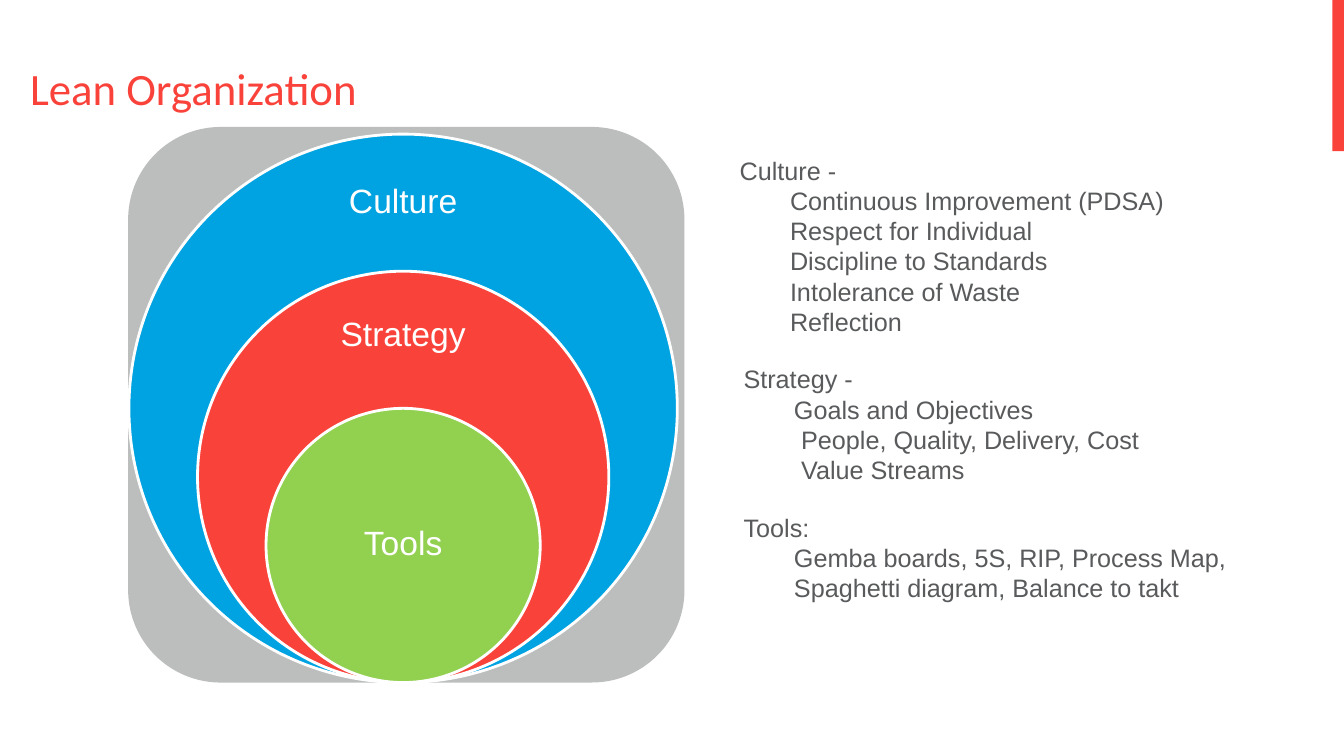
from pptx import Presentation
from pptx.dml.color import RGBColor
from pptx.enum.shapes import MSO_SHAPE as SHAPE
from pptx.enum.text import MSO_ANCHOR as ANCHOR, PP_ALIGN as ALIGN
from pptx.util import Cm, Pt
from lxml import etree
from pptx.oxml.ns import qn

THEME = {
    "red": RGBColor.from_string("F9423A"),
    "blue": RGBColor.from_string("00A3E1"),
    "green": RGBColor.from_string("92D050"),
    "grey": RGBColor.from_string("585A5C"),
    "white": RGBColor.from_string("FFFFFF"),
    "title": {"name": "Calibri", "size": Pt(32)},
    "label": {"name": "Arial", "size": Pt(24)},
    "body": {"name": "Arial", "size": Pt(18)},
}

prs = Presentation()
prs.slide_width, prs.slide_height = Cm(33.87), Cm(19.05)
s = prs.slides.add_slide(prs.slide_layouts[6])


def add_shape(kind, box, color, outlined=False):
    sp = s.shapes.add_shape(kind, *[Cm(v) for v in box])
    sp.shadow.inherit = False
    sp.fill.solid()
    sp.fill.fore_color.rgb = THEME[color]
    if outlined:
        sp.line.color.rgb = THEME["white"]
        sp.line.width = Pt(2)
    else:
        sp.line.fill.background()
    return sp


def add_text(box, lines, style, color, anchor=ANCHOR.TOP, **layout):
    tf = s.shapes.add_textbox(*[Cm(v) for v in box]).text_frame
    tf.word_wrap = True
    tf.vertical_anchor = anchor
    for i, (text, indent) in enumerate(lines):
        p = tf.paragraphs[0] if i == 0 else tf.add_paragraph()
        p._p.get_or_add_pPr().set("marL", str(Cm(indent)))
        for key, value in layout.items():
            setattr(p, key, value)
        r = p.add_run()
        r.text = text
        for key, value in THEME[style].items():
            setattr(r.font, key, value)
        r.font.color.rgb = THEME[color]


add_shape(SHAPE.RECTANGLE, (33.58, 0, 0.29, 3.81), "red")
add_text((0.51, 0.43, 22.86, 2.59), [("Lean Organization", 0)], "title", "red", ANCHOR.BOTTOM)

panel = add_shape(SHAPE.ROUNDED_RECTANGLE, (3.23, 3.2, 14.02, 14), "grey")
rgb = panel._element.spPr.find(qn("a:solidFill")).find(qn("a:srgbClr"))
etree.SubElement(rgb, qn("a:alpha")).set("val", "40000")

CENTER, BOTTOM, OUTER, LABEL_W = 10.16, 17.2, 13.82, 4.83
rings = [
    ("Culture", 1, "blue", 4.06, 2.08),
    ("Strategy", 0.75, "red", 7.49, 1.93),
    ("Tools", 0.5, "green", 12.01, 3.45),
]
for name, scale, color, top, height in rings:
    d = OUTER * scale
    add_shape(SHAPE.OVAL, (CENTER - d / 2, BOTTOM - d, d, d), color, outlined=True)
    add_text((CENTER - LABEL_W / 2, top, LABEL_W, height), [(name, 0)], "label", "white",
             ANCHOR.MIDDLE, alignment=ALIGN.CENTER, line_spacing=0.9)

TAB, DEEP = 1.27, 1.45
notes = [
    ((18.39, 3.78, 13.82, 4.88), [
        ("Culture -", 0),
        ("Continuous Improvement (PDSA)", TAB),
        ("Respect for Individual", TAB),
        ("Discipline to Standards", TAB),
        ("Intolerance of Waste", TAB),
        ("Reflection", TAB),
    ]),
    ((18.49, 9.04, 10.8, 3.33), [
        ("Strategy -", 0),
        ("Goals and Objectives", TAB),
        ("People, Quality, Delivery, Cost", DEEP),
        ("Value Streams", DEEP),
    ]),
    ((18.49, 12.78, 14.35, 2.57), [
        ("Tools:", 0),
        ("Gemba boards, 5S, RIP, Process Map,", TAB),
        ("Spaghetti diagram, Balance to takt", TAB),
    ]),
]
for box, lines in notes:
    add_text(box, lines, "body", "grey")

prs.save("out.pptx")
